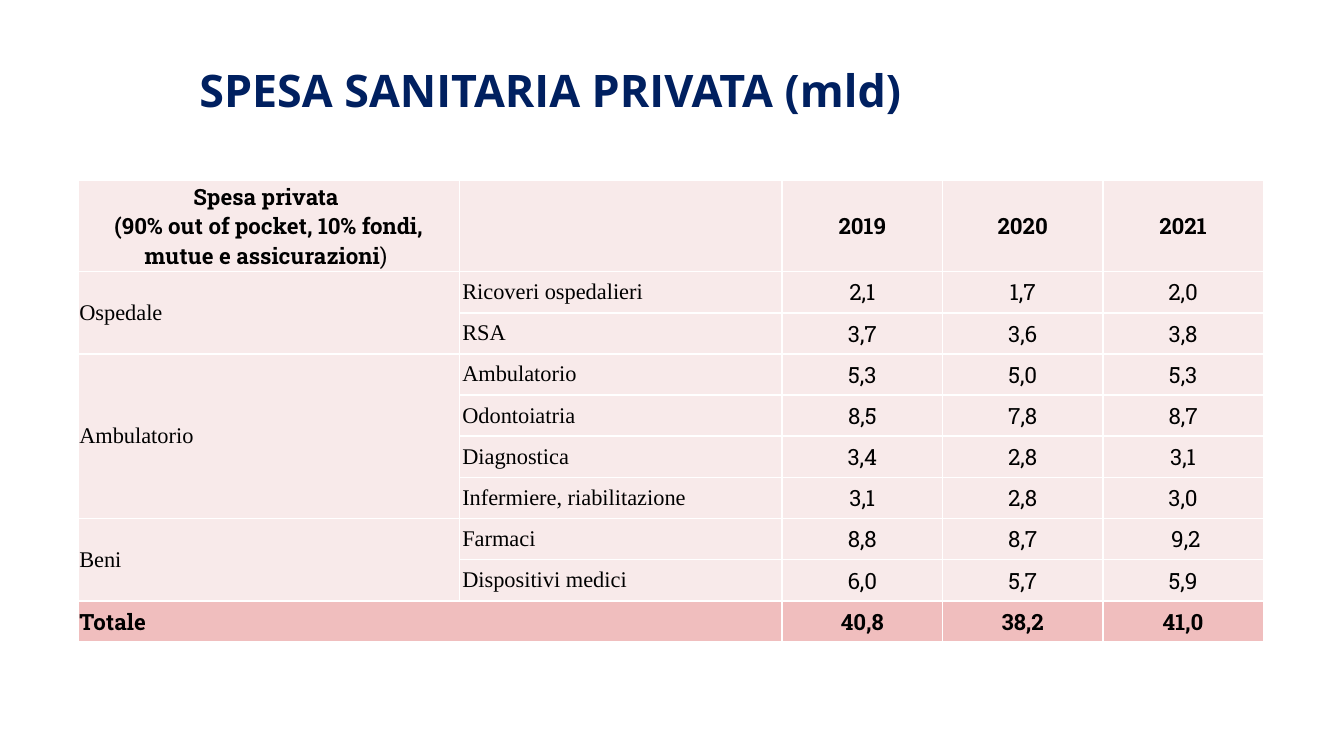
from lxml.etree import SubElement
from pptx import Presentation
from pptx.dml.color import RGBColor
from pptx.enum.text import MSO_ANCHOR as ANCHOR, PP_ALIGN as ALIGN
from pptx.oxml.ns import qn
from pptx.util import Inches, Pt

WIDTH = Inches(10)
HEIGHT = WIDTH * 9 // 16
TABLE_WIDTH, TABLE_HEIGHT = 8.82, 3.38
GROUP_COL, ITEM_COL, HEADER_ROW = 2.84, 2.4, 0.62
SLAB, SERIF, SANS = "Roboto Slab", "Times New Roman", "Open Sans"
PINK, ROSE, WHITE, BLACK, NAVY = "F8EAEA", "F0BEBE", "FFFFFF", "000000", "002060"
YEARS = ["2019", "2020", "2021"]
GROUPS = [
    ("Ospedale", [
        ("Ricoveri ospedalieri", "2,1", "1,7", "2,0"),
        ("RSA", "3,7", "3,6", "3,8"),
    ]),
    ("Ambulatorio", [
        ("Ambulatorio", "5,3", "5,0", "5,3"),
        ("Odontoiatria", "8,5", "7,8", "8,7"),
        ("Diagnostica", "3,4", "2,8", "3,1"),
        ("Infermiere, riabilitazione", "3,1", "2,8", "3,0"),
    ]),
    ("Beni", [
        ("Farmaci", "8,8", "8,7", " 9,2"),
        ("Dispositivi medici", "6,0", "5,7", "5,9"),
    ]),
]
TOTALS = ["40,8", "38,2", "41,0"]


def rgb(value):
    return RGBColor.from_string(value)


def add_run(p, text, font, size=12, bold=False, color=BLACK):
    r = p.add_run()
    r.text = text
    r.font.name = font
    r.font.size = Pt(size)
    r.font.bold = bold
    r.font.color.rgb = rgb(color)


def set_borders(cell):
    tc_pr = cell._tc.get_or_add_tcPr()
    for i, side in enumerate(("lnL", "lnR", "lnT", "lnB")):
        ln = tc_pr.makeelement(qn(f"a:{side}"), {"w": str(Pt(1))})
        fill = SubElement(ln, qn("a:solidFill"))
        SubElement(fill, qn("a:srgbClr")).set("val", WHITE)
        tc_pr.insert(i, ln)


def set_margins(cell, side, edge=0):
    cell.margin_left = cell.margin_right = Inches(side)
    cell.margin_top = cell.margin_bottom = Inches(edge)


def style_cell(cell, fill):
    cell.fill.solid()
    cell.fill.fore_color.rgb = rgb(fill)
    cell.vertical_anchor = ANCHOR.MIDDLE
    set_margins(cell, 0)
    set_borders(cell)


def write_label(cell, text, font=SERIF, bold=False, side=0.01):
    set_margins(cell, side, 0.01)
    add_run(cell.text_frame.paragraphs[0], text, font, bold=bold)


def write_values(tbl, row, values, bold=False):
    for col, value in enumerate(values, 2):
        p = tbl.cell(row, col).text_frame.paragraphs[0]
        p.alignment = ALIGN.CENTER
        add_run(p, value, SLAB, bold=bold)


def write_header(tbl):
    cell = tbl.cell(0, 0)
    set_margins(cell, 0.02, 0.01)
    tf = cell.text_frame
    first, second = tf.paragraphs[0], tf.add_paragraph()
    first.alignment = second.alignment = ALIGN.CENTER
    add_run(first, "Spesa privata ", SLAB, bold=True)
    add_run(second, "(90% out of pocket, 10% fondi, mutue e assicurazioni", SLAB, bold=True)
    add_run(second, ") ", SLAB)
    write_values(tbl, 0, YEARS, bold=True)
    for col in range(2, 5):
        set_margins(tbl.cell(0, col), 0.01, 0.01)


def write_groups(tbl):
    row = 1
    for group, items in GROUPS:
        top = tbl.cell(row, 0)
        top.merge(tbl.cell(row + len(items) - 1, 0))
        write_label(top, group)
        for item, *values in items:
            write_label(tbl.cell(row, 1), item, side=0.02)
            write_values(tbl, row, values)
            row += 1


def write_total(tbl, row):
    tbl.cell(row, 0).merge(tbl.cell(row, 1))
    write_label(tbl.cell(row, 0), "Totale", SLAB, bold=True)
    write_values(tbl, row, TOTALS, bold=True)


def add_spending_table(s):
    body = sum(len(items) for _, items in GROUPS) + 1
    year_col = (TABLE_WIDTH - GROUP_COL - ITEM_COL) / len(YEARS)
    widths = [GROUP_COL, ITEM_COL] + [year_col] * len(YEARS)
    heights = [HEADER_ROW] + [(TABLE_HEIGHT - HEADER_ROW) / body] * body
    frame = s.shapes.add_table(len(heights), len(widths), Inches(0.58), Inches(1.34),
                               Inches(TABLE_WIDTH), Inches(TABLE_HEIGHT))
    tbl = frame.table
    tbl.horz_banding = False
    for column, width in zip(tbl.columns, widths):
        column.width = Inches(width)
    for i, (row, height) in enumerate(zip(tbl.rows, heights)):
        row.height = Inches(height)
        for cell in row.cells:
            style_cell(cell, ROSE if i == body else PINK)
    write_header(tbl)
    write_groups(tbl)
    write_total(tbl, body)


def add_title(s, text):
    sp = s.shapes.add_textbox(Inches(0.42), Inches(0.39), Inches(7.35), Inches(0.48))
    tf = sp.text_frame
    tf.word_wrap = True
    tf.vertical_anchor = ANCHOR.BOTTOM
    tf.margin_left = tf.margin_right = tf.margin_top = tf.margin_bottom = 0
    p = tf.paragraphs[0]
    p.alignment = ALIGN.CENTER
    add_run(p, text, SANS, 24, True, NAVY)


def main():
    prs = Presentation()
    prs.slide_width, prs.slide_height = WIDTH, HEIGHT
    s = prs.slides.add_slide(prs.slide_layouts[6])
    add_spending_table(s)
    add_title(s, "SPESA SANITARIA PRIVATA (mld)")
    prs.save("out.pptx")


if __name__ == "__main__":
    main()
